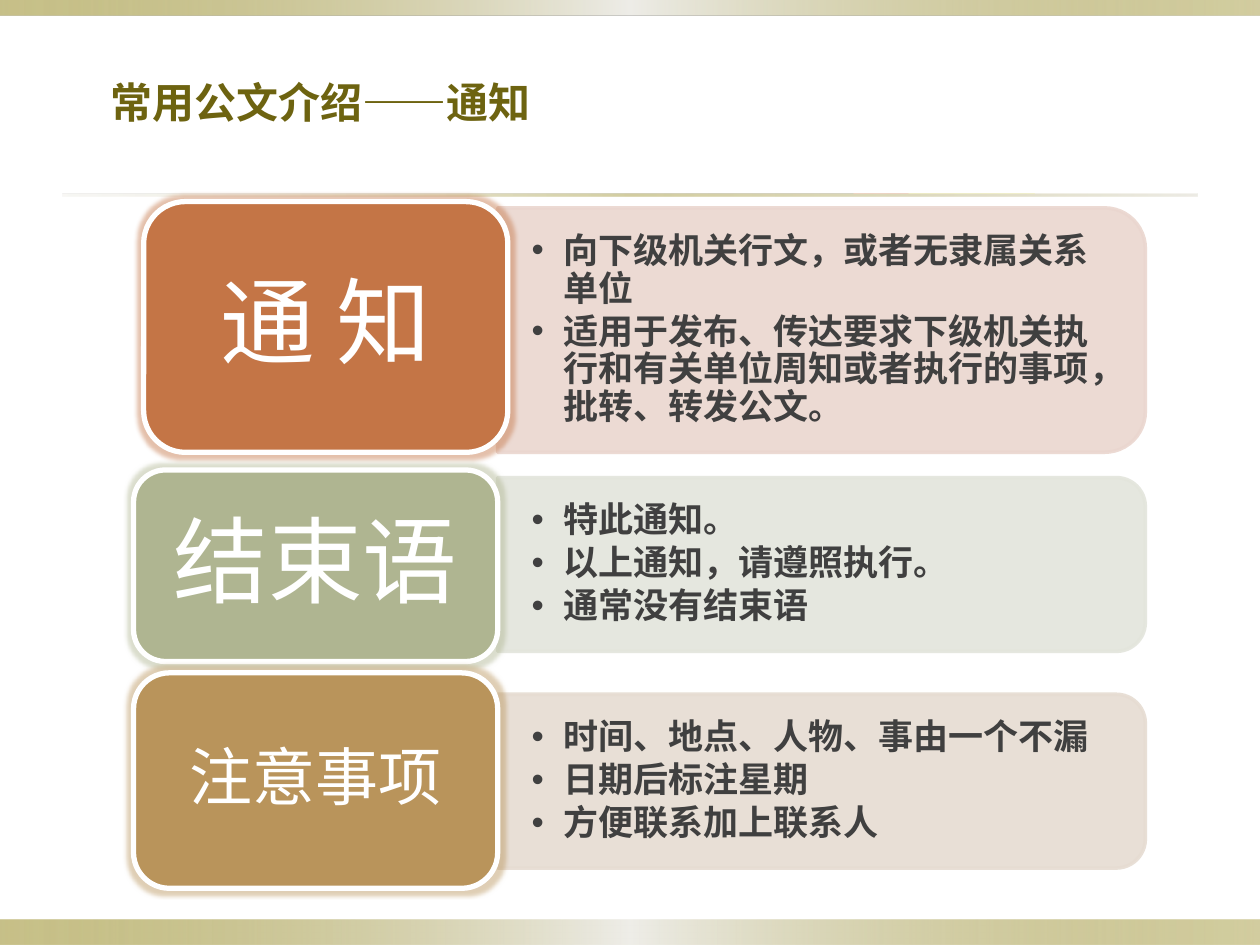
"""Build a slide on the notice: its use, closing words and points to note."""
import pptx
import pptx.util
import pptx.dml.color
import pptx.enum.shapes
import pptx.enum.text
import pptx.oxml
import pptx.oxml.ns

RGB = pptx.dml.color.RGBColor
Pt = pptx.util.Pt
KIND = pptx.enum.shapes.MSO_SHAPE
ALIGN = pptx.enum.text.PP_ALIGN
MID = pptx.enum.text.MSO_ANCHOR.MIDDLE
NS = pptx.oxml.ns.nsdecls("a")
xml = pptx.oxml.parse_xml

OLIVE = RGB(0x6D, 0x63, 0x10)
WHITE = RGB(0xFF, 0xFF, 0xFF)
GRAY = RGB(0x40, 0x40, 0x40)
RUST = RGB(0xC4, 0x75, 0x46)
SAGE = RGB(0xAF, 0xB5, 0x91)
TAN = RGB(0xB9, 0x94, 0x5B)
PINK = RGB(0xEA, 0xD6, 0xCF)
MIST = RGB(0xE3, 0xE5, 0xDC)
SAND = RGB(0xE6, 0xDC, 0xD2)
GOLD = RGB(0x91, 0x84, 0x15)
PALE = RGB(0xEE, 0xED, 0xE8)
STONE = RGB(0xDC, 0xD9, 0xCC)

deck = pptx.Presentation()
deck.slide_width = pptx.util.Inches(10)
deck.slide_height = pptx.util.Inches(7.5)
COL = deck.slide_width / 100
ROW = deck.slide_height / 75
slide = deck.slides.add_slide(deck.slide_layouts[6])
shapes = slide.shapes


def grid(left, top, wide, high):
    return [round(n) for n in (left * COL, top * ROW, wide * COL, high * ROW)]


def write(shape, lines, frame, para, font, face="Karla"):
    text = shape.text_frame
    text.text = "\n".join(lines)
    for key, val in frame.items():
        setattr(text, key, val)
    for item in text.paragraphs:
        for key, val in para.items():
            setattr(item, key, val)
        run = item.runs[0]
        for key, val in font.items():
            setattr(run.font, key, val)
        run.font.color.rgb = GRAY if face == "Karla" and font["bold"] else WHITE
        run.font.name = face
        run.font._element.find(pptx.oxml.ns.qn("a:latin")).addnext(
            xml(f'<a:ea {NS} typeface="Noto Sans CJK SC"/>'))


BAND = [(GOLD, 50), (PALE, 100), (GOLD, 40)]
RULE = [(STONE, 20), (GOLD, 40), (STONE, 50)]
for area, stops in [((0, 73, 100, 2), BAND), ((0, 0, 100, 1.2), BAND),
                    ((5, 15.4, 90, 0.2), RULE)]:
    bar = shapes.add_shape(KIND.RECTANGLE, *grid(*area))
    bar.shadow.inherit = False
    bar.line.fill.background()
    bar.fill.background()
    marks = "".join(
        f'<a:gs pos="{i * 50000}"><a:srgbClr val="{hue}">'
        f'<a:alpha val="{part * 1000}"/></a:srgbClr></a:gs>'
        for i, (hue, part) in enumerate(stops))
    blank = bar._element.spPr.find(pptx.oxml.ns.qn("a:noFill"))
    blank.getparent().replace(blank, xml(
        f'<a:gradFill {NS} rotWithShape="1"><a:gsLst>{marks}</a:gsLst>'
        '<a:lin ang="0" scaled="1"/></a:gradFill>'))

title = shapes.add_textbox(*grid(7.8, 5.6, 59.5, 5))
write(title, ["常用公文介绍——通知"], {"word_wrap": True}, {},
      {"size": Pt(24), "bold": True}, "Noto Sans CJK SC")
title.text_frame.paragraphs[0].runs[0].font.color.rgb = OLIVE

LEFT, LONG = 39.5, 51.4
BODY = {"word_wrap": True, "vertical_anchor": MID,
        "margin_left": round(2.7 * COL), "margin_right": round(2.7 * COL),
        "margin_top": round(1.4 * ROW), "margin_bottom": round(1.4 * ROW)}
HEAD = {"word_wrap": True, "vertical_anchor": MID,
        "margin_left": round(1.5 * COL), "margin_right": round(1.5 * COL),
        "margin_top": round(1.1 * ROW), "margin_bottom": round(1.1 * ROW)}
LIST = {"level": 1, "line_spacing": 0.9, "space_after": Pt(3),
        "alignment": ALIGN.LEFT}
NAME = {"line_spacing": 0.9, "alignment": ALIGN.CENTER}

parts = [
    ("通 知", 54, RUST, (11.4, 16, 28.9, 19.9), PINK, 26.2, 19.4,
     ["向下级机关行文，或者无隶属关系单位",
      "适用于发布、传达要求下级机关执行和有关单位周知或者执行的事项，批转、转发公文。"]),
    ("结束语", 54, SAGE, (10.6, 37.3, 28.9, 15.2), MIST, 44.8, 13.8,
     ["特此通知。", "以上通知，请遵照执行。", "通常没有结束语"]),
    ("注意事项", 36, TAN, (10.6, 53.4, 28.9, 17.1), SAND, 62, 13.8,
     ["时间、地点、人物、事由一个不漏", "日期后标注星期", "方便联系加上联系人"]),
]
for name, size, hue, area, tint, mid, high, lines in parts:
    panel = shapes.add_shape(KIND.ROUND_2_SAME_RECTANGLE, *grid(
        LEFT + (LONG - high) / 2, mid - LONG / 2, high, LONG))
    panel.rotation = 90
    card_text = shapes.add_textbox(*grid(LEFT, mid - high / 2 + 0.7,
                                         LONG - 0.8, high - 1.4))
    write(card_text, lines, BODY, LIST, {"size": Pt(20), "bold": True})
    for item in card_text.text_frame.paragraphs:
        props = item._p.get_or_add_pPr()
        props.set("marL", str(round(2.5 * COL)))
        props.set("indent", str(round(-2.5 * COL)))
        props.append(xml(f'<a:buFont {NS} typeface="Arial"/>'))
        props.append(xml(f'<a:buChar {NS} char="•"/>'))

    card = shapes.add_shape(KIND.ROUNDED_RECTANGLE, *grid(*area))
    write(card, [name], HEAD, NAME, {"size": Pt(size), "bold": False})
    for shape, fill, edge, wide in [(panel, tint, tint, 2), (card, hue, WHITE, 3)]:
        shape.shadow.inherit = False
        shape.fill.solid()
        shape.fill.fore_color.rgb = fill
        shape.line.color.rgb = edge
        shape.line.width = Pt(wide)
    for tone in panel._element.spPr.iter(pptx.oxml.ns.qn("a:srgbClr")):
        tone.append(xml(f'<a:alpha {NS} val="90000"/>'))
    card._element.spPr.find(pptx.oxml.ns.qn("a:effectLst")).append(xml(
        f'<a:glow {NS} rad="63500"><a:srgbClr val="{hue}">'
        '<a:alpha val="45000"/></a:srgbClr></a:glow>'))

deck.save("out.pptx")
